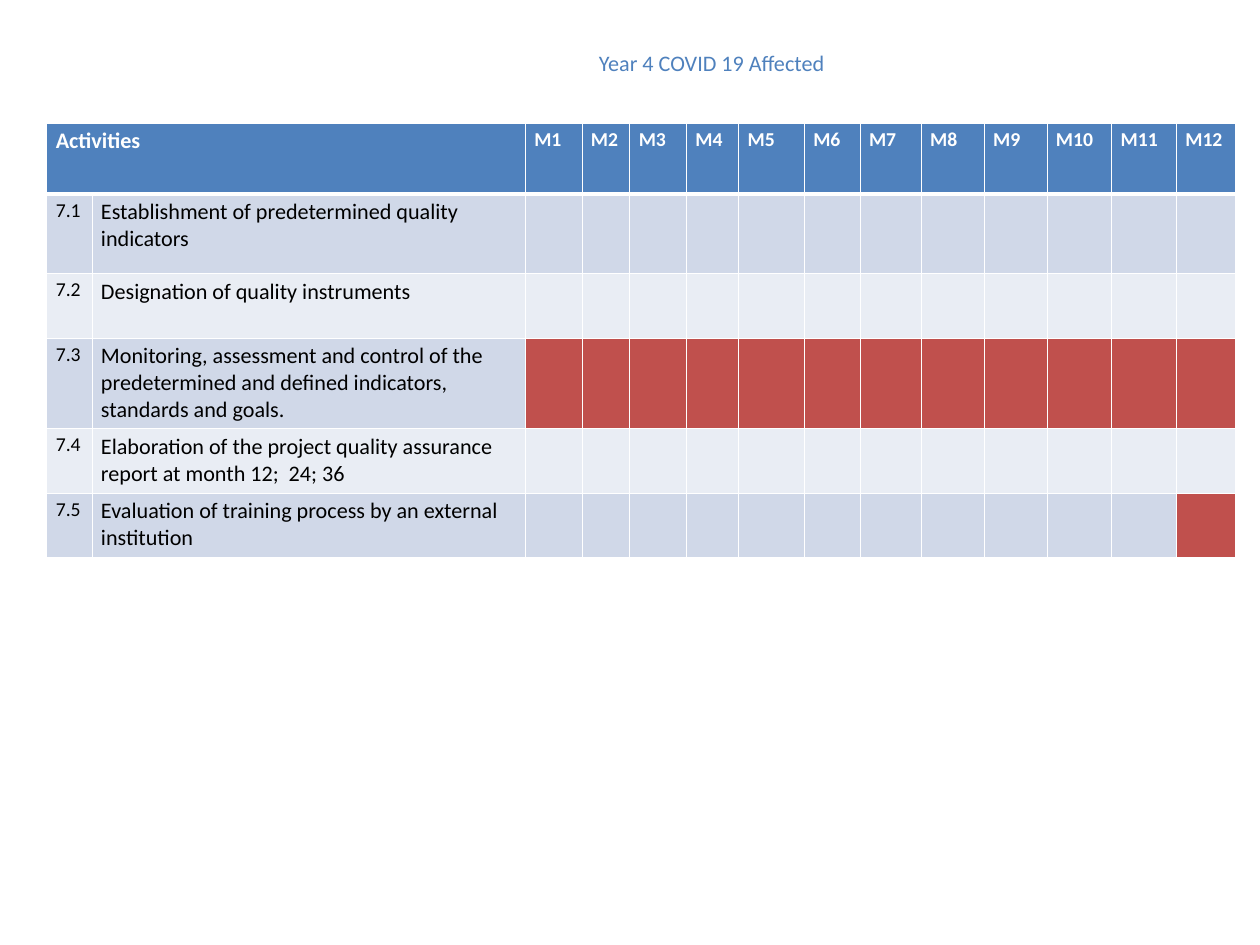
from lxml.etree import SubElement
from pptx import Presentation
from pptx.dml.color import RGBColor
from pptx.enum.text import MSO_ANCHOR, MSO_AUTO_SIZE, PP_ALIGN
from pptx.oxml.ns import qn
from pptx.util import Inches, Pt

BLUE = RGBColor(0x4F, 0x81, 0xBD)
RED = RGBColor(0xC0, 0x50, 0x4D)
DARK_BAND = RGBColor(0xD0, 0xD8, 0xE8)
LIGHT_BAND = RGBColor(0xE9, 0xED, 0xF4)
WHITE = RGBColor(0xFF, 0xFF, 0xFF)
BLACK = RGBColor(0x00, 0x00, 0x00)

MONTHS = range(1, 13)
FIRST_MONTH_COLUMN = 2
COLUMN_WIDTHS = [0.51, 4.89, 0.64, 0.54, 0.64, 0.59, 0.74,
                 0.63, 0.69, 0.71, 0.71, 0.73, 0.73, 0.67]
ROW_HEIGHTS = [0.8, 0.9, 0.73, 1.02, 0.73, 0.73]

# Number, activity and the months marked in red
ACTIVITIES = [
    ("7.1", "Establishment of predetermined quality indicators", []),
    ("7.2", "Designation of quality instruments", []),
    ("7.3", "Monitoring, assessment and control of the predetermined "
            "and defined indicators, standards and goals.", MONTHS),
    ("7.4", "Elaboration of the project quality assurance report "
            "at month 12;  24; 36", []),
    ("7.5", "Evaluation of training process by an external institution", [12]),
]


class SlideBuilder:
    """Holds the text style and the slide being built."""

    def __init__(self, slide, font_name):
        self.slide = slide
        self.font_name = font_name

    def style(self, para, size, color, bold=False):
        para.font.name = self.font_name
        para.font.size = Pt(size)
        para.font.bold = bold
        para.font.color.rgb = color

    def title(self, text, left, top, width, height):
        box = self.slide.shapes.title
        box.left, box.top = Inches(left), Inches(top)
        box.width, box.height = Inches(width), Inches(height)
        frame = box.text_frame
        frame.text = text
        frame.word_wrap = True
        frame.auto_size = MSO_AUTO_SIZE.NONE
        frame.vertical_anchor = MSO_ANCHOR.TOP
        para = frame.paragraphs[0]
        para.alignment = PP_ALIGN.LEFT
        self.style(para, 18, BLUE)

    def table(self, left, top, widths, heights):
        frame = self.slide.shapes.add_table(
            len(heights), len(widths), Inches(left), Inches(top),
            Inches(sum(widths)), Inches(sum(heights)))
        table = frame.table
        for column, width in zip(table.columns, widths):
            column.width = Inches(width)
        for row, height in zip(table.rows, heights):
            row.height = Inches(height)
        return table

    def borders(self, cell, top, bottom):
        properties = cell._tc.get_or_add_tcPr()
        for side, points in (("L", 1), ("R", 1), ("T", top), ("B", bottom)):
            line = SubElement(properties, qn(f"a:ln{side}"), w=str(Pt(points)))
            fill = SubElement(line, qn("a:solidFill"))
            SubElement(fill, qn("a:srgbClr"), val=str(WHITE))

    def cell(self, cell, fill, text="", size=16, color=BLACK, bold=False,
             top=1, bottom=1):
        self.borders(cell, top, bottom)
        cell.fill.solid()
        cell.fill.fore_color.rgb = fill
        cell.text = text
        self.style(cell.text_frame.paragraphs[0], size, color, bold)


def main():
    deck = Presentation()
    deck.slide_width, deck.slide_height = Inches(14.22), Inches(10.67)
    page = deck.slides.add_slide(deck.slide_layouts[5])
    builder = SlideBuilder(page, "Calibri")

    # Title
    builder.title("Year 4 COVID 19 Affected", 6.66, 0.51, 7.3, 0.4)

    # Table header
    table = builder.table(0.53, 1.39, COLUMN_WIDTHS, ROW_HEIGHTS)
    headings = ["Activities", ""] + [f"M{month}" for month in MONTHS]
    for column, heading in enumerate(headings):
        size = 18 if column < FIRST_MONTH_COLUMN else 16
        builder.cell(table.cell(0, column), BLUE, heading, size, WHITE,
                     bold=True, bottom=3)
    table.cell(0, 0).merge(table.cell(0, 1))

    # Activity rows with their months
    for row, (number, activity, marked) in enumerate(ACTIVITIES, start=1):
        band = DARK_BAND if row % 2 else LIGHT_BAND
        top = 3 if row == 1 else 1
        builder.cell(table.cell(row, 0), band, number, top=top)
        builder.cell(table.cell(row, 1), band, activity, 18, top=top)
        for month in MONTHS:
            fill = RED if month in marked else band
            column = FIRST_MONTH_COLUMN + month - 1
            builder.cell(table.cell(row, column), fill, top=top)

    deck.save("out.pptx")


if __name__ == "__main__":
    main()
